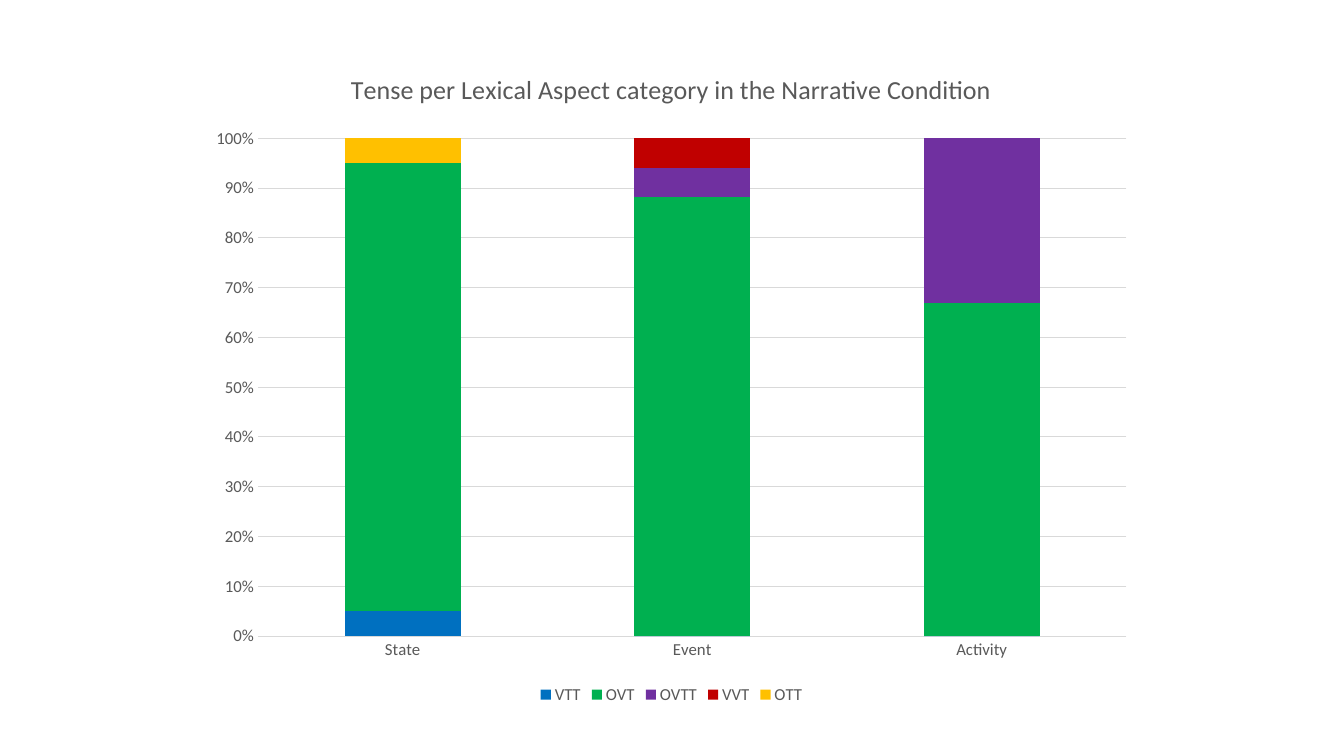
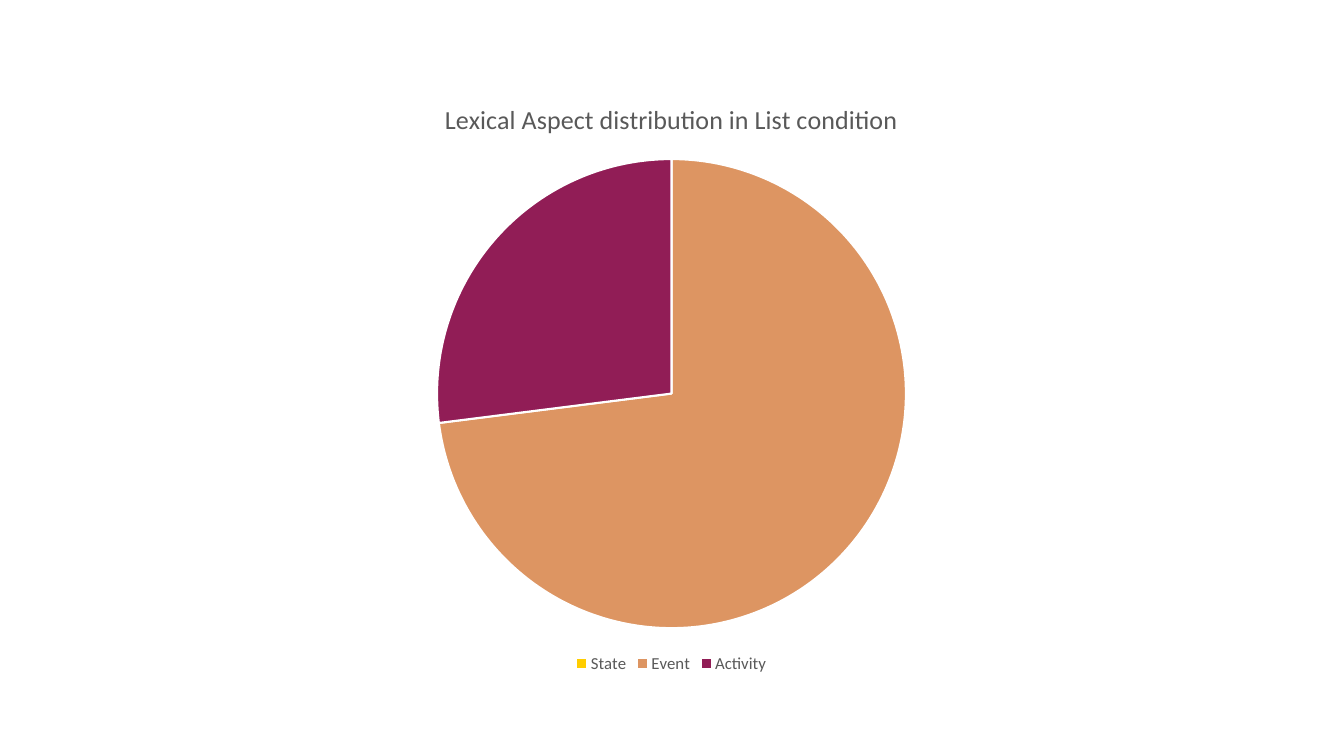
"""Build two slides, each with one chart on tense and lexical aspect."""
from pptx import Presentation
from pptx.chart.data import CategoryChartData
from pptx.dml.color import RGBColor
from pptx.enum.chart import XL_CHART_TYPE, XL_LEGEND_POSITION, XL_TICK_MARK
from pptx.util import Emu, Pt

PX = 9144
GREY, GRID, WHITE = "595959", "D9D9D9", "FFFFFF"
BASE = {"name": "Calibri", "size": Pt(10), "bold": False}
LABEL = {"name": "Calibri", "size": Pt(12), "bold": False}
TITLE = {"name": "Calibri", "size": Pt(18.6), "bold": False}
CATS = ["State", "Event", "Activity"]

CHARTS = [
    {
        "title": "Tense per Lexical Aspect category in the Narrative Condition",
        "kind": XL_CHART_TYPE.COLUMN_STACKED_100,
        "box": (196, 48, 941, 655),
        "rows": {
            "VTT": (5, 0, 0),
            "OVT": (91, 89, 67),
            "OVTT": (0, 6, 33),
            "VVT": (0, 6, 0),
            "OTT": (5, 0, 0),
        },
        "tones": ["0070C0", "00B050", "7030A0", "C00000", "FFC000"],
    },
    {
        "title": "Lexical Aspect distribution in List condition",
        "kind": XL_CHART_TYPE.PIE,
        "box": (222, 79, 889, 593),
        "rows": {"Series 1": (0, 73, 27)},
        "tones": ["FFCD00", "DD9562", "911D56"],
    },
]


def paint(part, tone):
    """Give a fill or line one solid colour."""
    part.solid()
    part.fore_color.rgb = RGBColor.from_string(tone)


def style(font, look, tone=GREY):
    """Apply format values and a colour to a font."""
    for key, value in look.items():
        setattr(font, key, value)
    paint(font.fill, tone)


deck = Presentation()
deck.slide_width, deck.slide_height = Emu(1334 * PX), Emu(750 * PX)

for item in CHARTS:
    slide = deck.slides.add_slide(deck.slide_layouts[6])
    paint(slide.background.fill, WHITE)

    data = CategoryChartData()
    data.categories = CATS
    for name, values in item["rows"].items():
        data.add_series(name, values)
    box = [Emu(n * PX) for n in item["box"]]
    chart = slide.shapes.add_chart(item["kind"], *box, data).chart
    style(chart.font, BASE, "000000")

    chart.has_title = True
    frame = chart.chart_title.text_frame
    frame.text = item["title"]
    style(frame.paragraphs[0].runs[0].font, TITLE)

    chart.has_legend = True
    chart.legend.position = XL_LEGEND_POSITION.BOTTOM
    chart.legend.include_in_layout = False
    style(chart.legend.font, LABEL)

    plot = chart.plots[0]
    if item["kind"] == XL_CHART_TYPE.PIE:
        plot.vary_by_categories = True
        for spot, tone in enumerate(item["tones"]):
            slice_ = plot.series[0].points[spot].format
            paint(slice_.fill, tone)
            paint(slice_.line.fill, WHITE)
            slice_.line.width = Pt(1.5)
        continue

    plot.vary_by_categories = False
    plot.gap_width, plot.overlap = 150, 100
    for series, tone in zip(plot.series, item["tones"]):
        paint(series.format.fill, tone)

    cat, val = chart.category_axis, chart.value_axis
    for axis in (cat, val):
        axis.major_tick_mark = axis.minor_tick_mark = XL_TICK_MARK.NONE
        style(axis.tick_labels.font, LABEL)
    val.has_major_gridlines = True
    for line in (cat.format.line, val.major_gridlines.format.line):
        paint(line.fill, GRID)
        line.width = Pt(0.75)
    val.format.line.fill.background()
    val.tick_labels.number_format = "0%"
    val.tick_labels.number_format_is_linked = False

deck.save("out.pptx")
